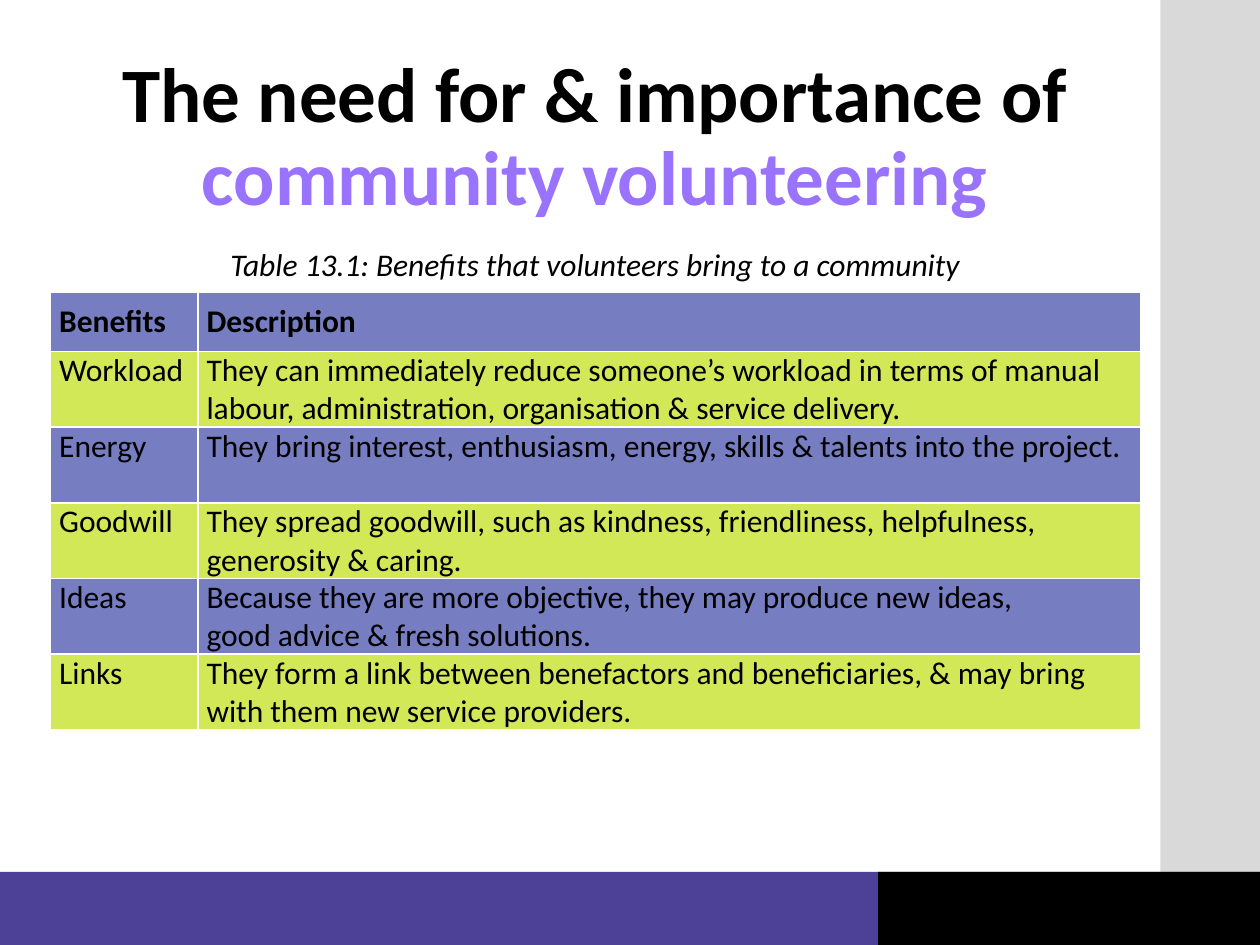
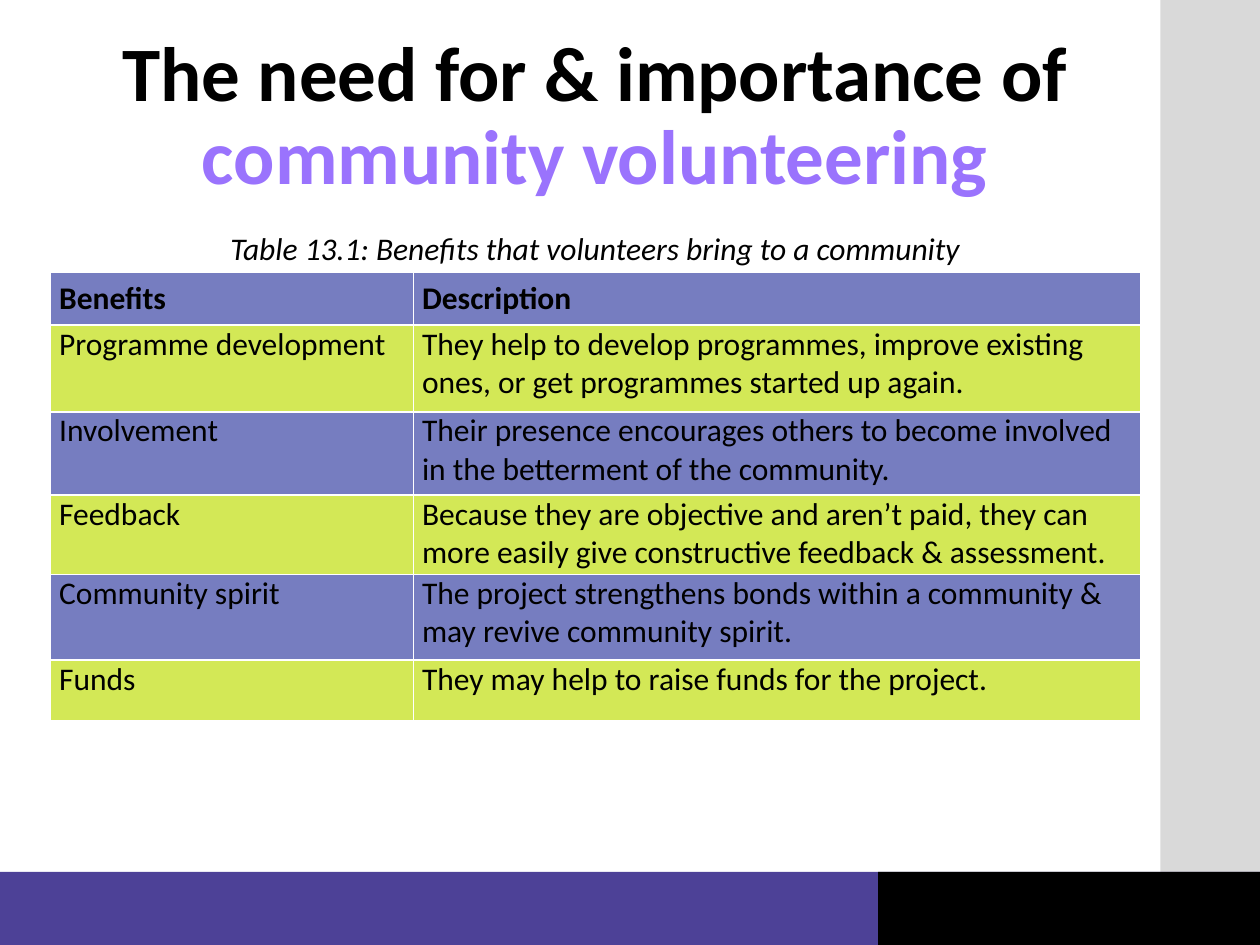
from dataclasses import dataclass

from lxml import etree
from pptx import Presentation
from pptx import util as u
from pptx.dml import color
from pptx.enum import shapes, text
from pptx.oxml import ns

COLS, ROWS = 100, 75


@dataclass(frozen=True)
class Theme:
    font: str = "Calibri"
    black: str = "000000"
    white: str = "FFFFFF"
    grey: str = "D9D9D9"
    purple: str = "4D4197"
    lilac: str = "9A73FD"
    blue: str = "767DC0"
    lime: str = "D3E856"
    title: int = 44
    body: int = 18


THEME = Theme()
LEFT, WIDTH = 4, 86.5
BANDS = [
    (92.1, 0, 7.9, 74.8, THEME.grey),
    (0, 69.2, COLS, 5.8, THEME.purple),
    (69.7, 69.2, 30.3, 5.8, THEME.black),
]
TITLE = [
    ("The need for & importance of ", THEME.black),
    ("community volunteering", THEME.lilac),
]
CAPTION = [("Table 13.1: Benefits that volunteers bring to a community", THEME.black)]
HEAD = ("Benefits", "Description")

FIRST = [
    HEAD,
    ("Workload", "They can immediately reduce someone’s workload in terms of manual "
     "labour, administration, organisation & service delivery."),
    ("Energy", "They bring interest, enthusiasm, energy, skills & talents into the project."),
    ("Goodwill", "They spread goodwill, such as kindness, friendliness, helpfulness, "
     "generosity & caring."),
    ("Ideas", "Because they are more objective, they may produce new ideas,\n"
     "good advice & fresh solutions."),
    ("Links", "They form a link between benefactors and beneficiaries, & may bring "
     "with them new service providers."),
]
SECOND = [
    HEAD,
    ("Programme development", "They help to develop programmes, improve existing ones, "
     "or get programmes started up again."),
    ("Involvement", "Their presence encourages others to become involved in the "
     "betterment of the community."),
    ("Feedback", "Because they are objective and aren’t paid, they can more easily give "
     "constructive feedback & assessment."),
    ("Community spirit", "The project strengthens bonds within a community & may revive "
     "community spirit."),
    ("Funds", "They may help to raise funds for the project."),
]


def grid(*cells):
    return [u.Inches(cell / 10) for cell in cells]


def rgb(tone):
    return color.RGBColor.from_string(tone)


def style(run, size, tone=THEME.black, bold=False, slant=False):
    font = run.font
    font.name, font.size = THEME.font, u.Pt(size)
    font.bold, font.italic = bold, slant
    font.color.rgb = rgb(tone)


def add_band(slide, left, top, width, height, tone):
    band = slide.shapes.add_shape(
        shapes.MSO_SHAPE.RECTANGLE, *grid(left, top, width, height))
    band.shadow.inherit = False
    band.fill.solid()
    band.fill.fore_color.rgb = rgb(tone)
    band.line.fill.background()


def add_text(slide, top, height, parts, size, anchor, **look):
    frame = slide.shapes.add_textbox(*grid(LEFT, top, WIDTH, height)).text_frame
    frame.word_wrap = True
    frame.vertical_anchor = anchor
    line = frame.paragraphs[0]
    line.alignment = text.PP_ALIGN.CENTER
    line.line_spacing = 0.9
    for words, tone in parts:
        run = line.add_run()
        run.text = words
        style(run, size, tone, **look)


def add_edges(cell):
    props = cell._tc.get_or_add_tcPr()
    for side in ("lnL", "lnR", "lnT", "lnB"):
        edge = etree.SubElement(props, ns.qn(f"a:{side}"), w=str(u.Pt(1)))
        fill = etree.SubElement(edge, ns.qn("a:solidFill"))
        etree.SubElement(fill, ns.qn("a:srgbClr"), val=THEME.white)


def fill_cell(cell, words, row):
    add_edges(cell)
    cell.fill.solid()
    cell.fill.fore_color.rgb = rgb(THEME.lime if row % 2 else THEME.blue)
    cell.margin_left, cell.margin_right = grid(0.7, 0.7)
    cell.margin_top = cell.margin_bottom = 0
    cell.vertical_anchor = text.MSO_ANCHOR.TOP if row else text.MSO_ANCHOR.MIDDLE
    cell.text_frame.text = words
    for line in cell.text_frame.paragraphs:
        for run in line.runs:
            style(run, THEME.body, bold=row == 0)


def add_table(slide, top, split, heights, data):
    table = slide.shapes.add_table(
        len(data), len(HEAD), *grid(LEFT, top, WIDTH, sum(heights))).table
    for col, width in zip(table.columns, grid(split, WIDTH - split)):
        col.width = width
    for row, height in zip(table.rows, grid(*heights)):
        row.height = height
    for row, pair in enumerate(data):
        for col, words in enumerate(pair):
            fill_cell(table.cell(row, col), words, row)


def add_page(deck, tops, split, heights, data):
    slide = deck.slides.add_slide(deck.slide_layouts[6])
    for band in BANDS:
        add_band(slide, *band)
    head, note, body = tops
    add_text(slide, head, 13.2, TITLE, THEME.title, text.MSO_ANCHOR.MIDDLE, bold=True)
    add_text(slide, note, 3.2, CAPTION, THEME.body, text.MSO_ANCHOR.TOP, slant=True)
    add_table(slide, body, split, heights, data)


def main():
    deck = Presentation()
    deck.slide_width, deck.slide_height = grid(COLS, ROWS)
    add_page(deck, (4.4, 19.3, 23.2), 11.7, (4.7, 5.4, 6, 5.7, 5.7, 5.4), FIRST)
    add_page(deck, (2.8, 18, 21.6), 28.8, (4.2, 6.9, 6.6, 6.3, 6.8, 4.8), SECOND)
    deck.save("out.pptx")


if __name__ == "__main__":
    main()
